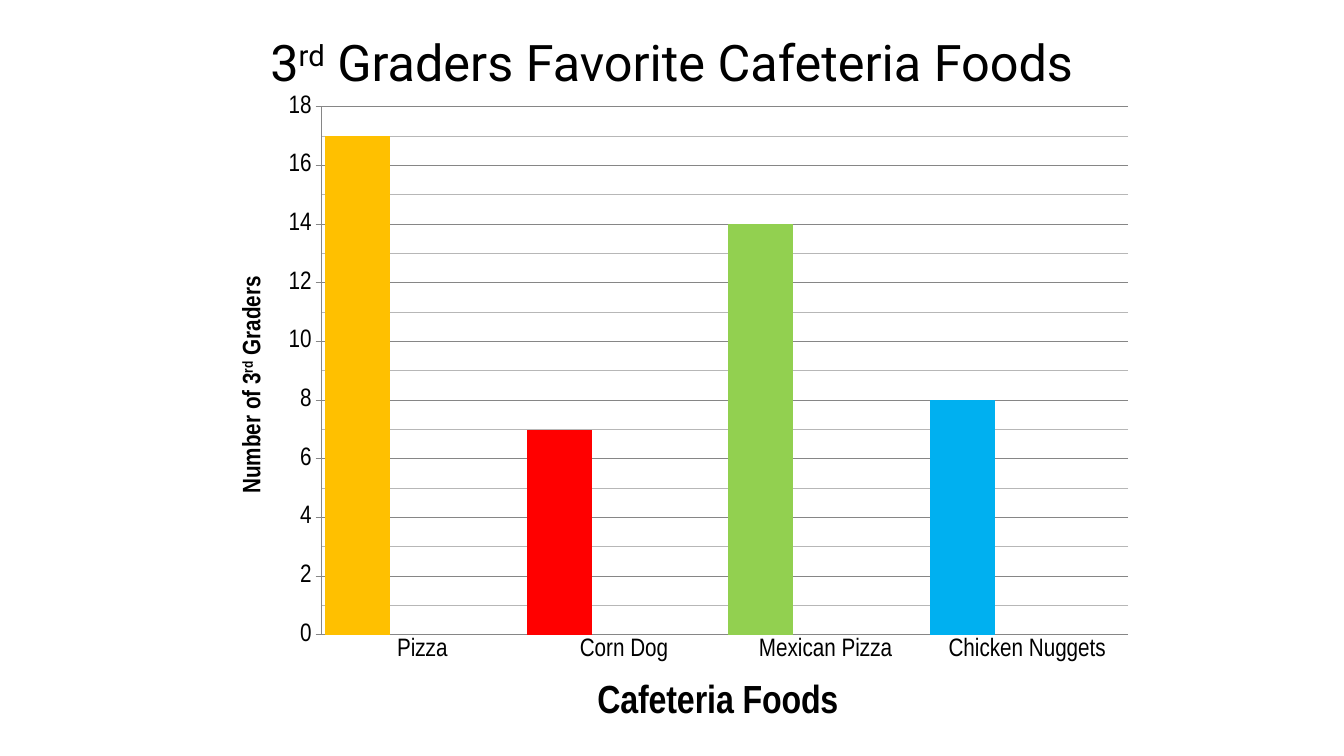
import copy

import pptx
import pptx.util
import pptx.chart.data
import pptx.dml.color
import pptx.enum.chart
import pptx.enum.text
import pptx.oxml

BLACK = pptx.dml.color.RGBColor(0x00, 0x00, 0x00)
MAJOR_GRAY = pptx.dml.color.RGBColor(0x86, 0x86, 0x86)
MINOR_GRAY = pptx.dml.color.RGBColor(0xB7, 0xB7, 0xB7)
GOLD = pptx.dml.color.RGBColor(0xFF, 0xC0, 0x00)
RED = pptx.dml.color.RGBColor(0xFF, 0x00, 0x00)
GREEN = pptx.dml.color.RGBColor(0x92, 0xD0, 0x50)
BLUE = pptx.dml.color.RGBColor(0x00, 0xB0, 0xF0)
ORANGE = pptx.dml.color.RGBColor(0xED, 0x7D, 0x31)
GRAY = pptx.dml.color.RGBColor(0xA5, 0xA5, 0xA5)
CHART_NAMESPACE = "http://schemas.openxmlformats.org/drawingml/2006/chart"


def place(element, index, target, **shares):
    for layout in element.findall(f"{{{CHART_NAMESPACE}}}layout"):
        element.remove(layout)
    modes = '<c:xMode val="edge"/><c:yMode val="edge"/>'
    values = "".join(f'<c:{name} val="{share:.4f}"/>' for name, share in shares.items())
    element.insert(index, pptx.oxml.parse_xml(
        f'<c:layout xmlns:c="{CHART_NAMESPACE}"><c:manualLayout>'
        f"{target}{modes}{values}</c:manualLayout></c:layout>"))


def add_runs(paragraph, texts, font_name, size, bold):
    for text in texts:
        run = paragraph.add_run()
        run.text = text
        run.font.name = font_name
        run.font.size = pptx.util.Pt(size)
        run.font.bold = bold
        run.font.color.rgb = BLACK
        if text == "rd":
            run.font._element.set("baseline", "30000")


presentation = pptx.Presentation()
presentation.slide_width = pptx.util.Inches(13.33)
presentation.slide_height = pptx.util.Inches(7.5)
slide = presentation.slides.add_slide(presentation.slide_layouts[5])

title = slide.shapes.title
title.left, title.top = pptx.util.Inches(1.83), pptx.util.Inches(0.3)
title.width, title.height = pptx.util.Inches(9.67), pptx.util.Inches(0.7)
title.text_frame.vertical_anchor = pptx.enum.text.MSO_ANCHOR.MIDDLE
title.text_frame.auto_size = pptx.enum.text.MSO_AUTO_SIZE.NONE
heading = title.text_frame.paragraphs[0]
heading.alignment = pptx.enum.text.PP_ALIGN.CENTER
heading.line_spacing = 0.9
add_runs(heading, ["3", "rd", " Graders Favorite Cafeteria Foods"], "Roboto", 36, False)

chart_data = pptx.chart.data.CategoryChartData()
chart_data.categories = ["Pizza", "Corn Dog", "Mexican Pizza", "Chicken Nuggets"]
chart_data.add_series("Series 1", [17, 7, 14, 8])
chart_data.add_series("Series 2", [None] * 4)
chart_data.add_series("Series 3", [None] * 4)
chart = slide.shapes.add_chart(
    pptx.enum.chart.XL_CHART_TYPE.COLUMN_CLUSTERED,
    pptx.util.Inches(2.17), pptx.util.Inches(0.82),
    pptx.util.Inches(9.21), pptx.util.Inches(6.51), chart_data).chart
chart.has_legend = False
chart.has_title = False
chart.font.name = "Calibri"
chart.font.size = pptx.util.Pt(18)
chart.font.color.rgb = BLACK

plot = chart.plots[0]
plot.gap_width = 11
plot.overlap = 0
plot.vary_by_categories = False
for series, color in zip(plot.series, [RED, ORANGE, GRAY]):
    series.format.fill.solid()
    series.format.fill.fore_color.rgb = color
for index, color in enumerate([GOLD, RED, GREEN, BLUE]):
    fill = plot.series[0].points[index].format.fill
    fill.solid()
    fill.fore_color.rgb = color

category_axis, value_axis = chart.category_axis, chart.value_axis
category_axis.major_tick_mark = pptx.enum.chart.XL_TICK_MARK.NONE
value_axis.major_tick_mark = pptx.enum.chart.XL_TICK_MARK.OUTSIDE
value_axis.minimum_scale, value_axis.maximum_scale = 0, 18
value_axis.major_unit, value_axis.minor_unit = 2, 1
value_axis.has_major_gridlines = value_axis.has_minor_gridlines = True
major_line = value_axis.major_gridlines.format.line
for line in [category_axis.format.line, value_axis.format.line, major_line]:
    line.color.rgb = MAJOR_GRAY
    line.width = pptx.util.Pt(0.75)

major_grid = value_axis._element.find(f"{{{CHART_NAMESPACE}}}majorGridlines")
minor_grid = value_axis._element.find(f"{{{CHART_NAMESPACE}}}minorGridlines")
minor_grid.append(copy.deepcopy(major_grid[0]))
for color_element in minor_grid.iter("{*}srgbClr"):
    color_element.set("val", str(MINOR_GRAY))

for axis, texts, size, left, top in [
    (category_axis, ["Cafeteria Foods"], 28, 0.4, 0.9),
    (value_axis, ["Number of 3", "rd", " Graders"], 18, 0.02, 0.29),
]:
    axis.tick_labels.font.name = "Arial Narrow"
    axis.tick_labels.font.size = pptx.util.Pt(18)
    axis.tick_labels.font.color.rgb = BLACK
    frame = axis.axis_title.text_frame
    add_runs(frame.paragraphs[0], texts, "Arial Narrow", size, True)
    if axis is value_axis:
        frame._txBody.bodyPr.set("rot", "-5400000")
        frame._txBody.bodyPr.set("vert", "horz")
    place(axis.axis_title._element, 1, "", x=left, y=top)

place(chart._chartSpace.chart.plotArea, 0, '<c:layoutTarget val="inner"/>',
      x=1.02 / 9.21, y=0.24 / 6.51, w=8 / 9.21, h=5.24 / 6.51)

presentation.save("out.pptx")
